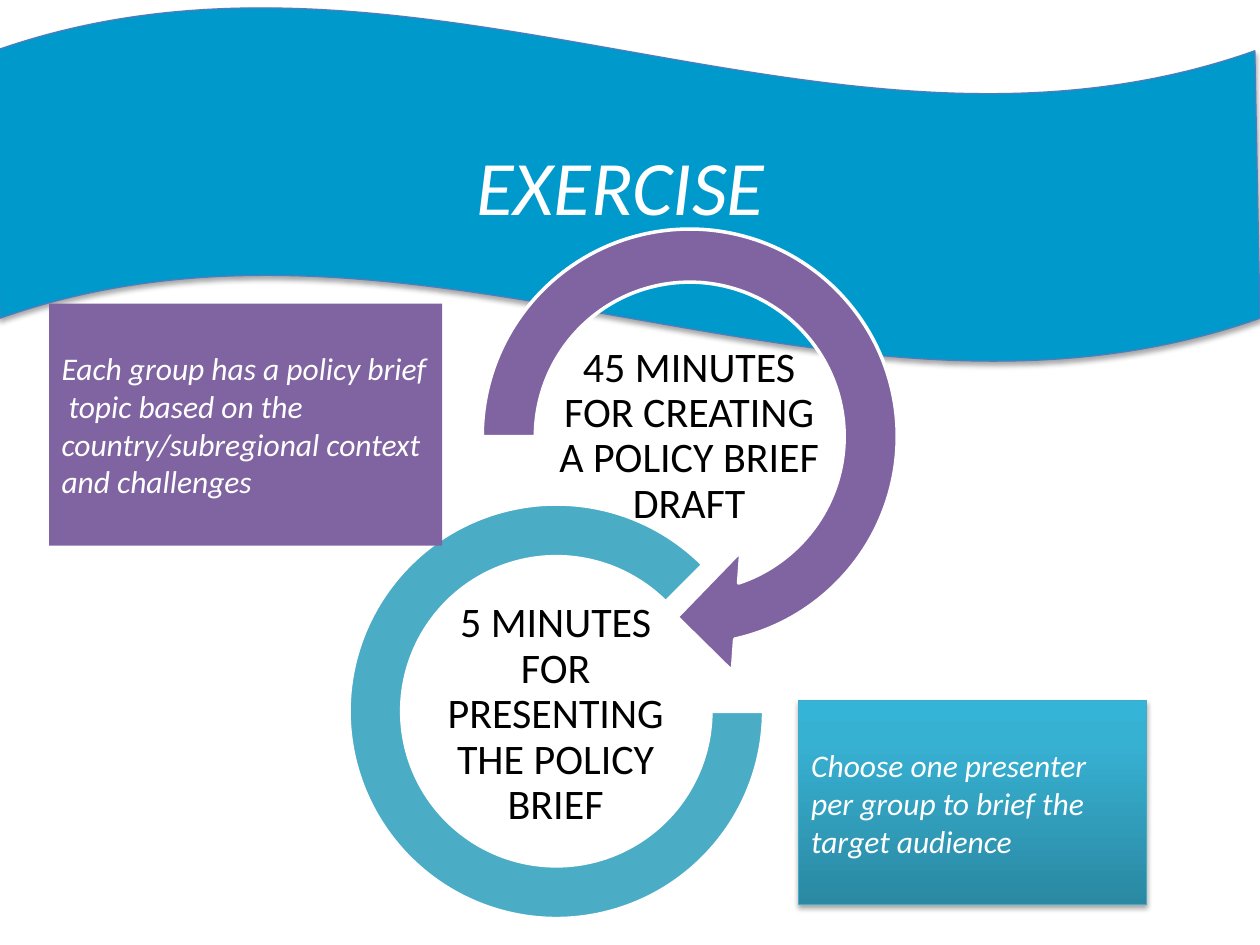
from copy import deepcopy
from dataclasses import dataclass

from lxml import etree
from pptx import Presentation
from pptx.dml.color import RGBColor
from pptx.enum.shapes import MSO_SHAPE
from pptx.enum.text import MSO_ANCHOR, PP_ALIGN
from pptx.oxml.ns import qn
from pptx.util import Inches, Pt

WAVE, RECT = MSO_SHAPE.WAVE, MSO_SHAPE.RECTANGLE
ARROW, ARC = MSO_SHAPE.CIRCULAR_ARROW, MSO_SHAPE.BLOCK_ARC
LEFT, CENTER = PP_ALIGN.LEFT, PP_ALIGN.CENTER
TOP, MIDDLE = MSO_ANCHOR.TOP, MSO_ANCHOR.MIDDLE


@dataclass(frozen=True)
class Theme:
    font: str = "Calibri"
    title: int = 44
    step: int = 24
    note: int = 18
    white: str = "FFFFFF"
    black: str = "000000"
    blue: str = "0099CC"
    edge: str = "4B7EBC"
    purple: str = "8064A2"
    teal: str = "4BACC6"
    rim: str = "46AAC5"
    fade: tuple = ((0, "2A88A2"), (0.8, "37B1D2"), (1, "34B4D6"))


THEME = Theme()


def color(code):
    return RGBColor.from_string(code)


def add_shape(slide, kind, box, fill=None, line=None, width=0.75, adjust=()):
    shape = slide.shapes.add_shape(kind, *map(Inches, box))
    shape.shadow.inherit = False
    for i, value in enumerate(adjust):
        shape.adjustments[i] = value
    if fill:
        shape.fill.solid()
        shape.fill.fore_color.rgb = color(fill)
    if line:
        shape.line.color.rgb = color(line)
        shape.line.width = Pt(width)
    else:
        shape.line.fill.background()
    return shape


def add_shadow(shape):
    """Give the shape a soft shadow that falls straight down."""
    effects = shape._element.spPr.find(qn("a:effectLst"))
    outer = etree.SubElement(
        effects, qn("a:outerShdw"), blurRad=str(Pt(3.1)), dist=str(Pt(1.8)),
        dir="5400000", rotWithShape="0")
    tint = etree.SubElement(outer, qn("a:srgbClr"), val=THEME.black)
    etree.SubElement(tint, qn("a:alpha"), val="35000")


def add_fade(shape, stops):
    """Fill the shape with a gradient that runs from bottom to top."""
    shape.fill.gradient()
    shape.fill.gradient_angle = 90
    nodes = shape._element.spPr.find(".//" + qn("a:gsLst"))
    while len(nodes) < len(stops):
        nodes.append(deepcopy(nodes[0]))
    for stop, (place, code) in zip(shape.fill.gradient_stops, stops):
        stop.position = place
        stop.color.rgb = color(code)


def write(shape, text, size, code, align=LEFT, anchor=MIDDLE, italic=True):
    frame = shape.text_frame
    frame.word_wrap = True
    frame.vertical_anchor = anchor
    para = frame.paragraphs[0]
    para.alignment = align
    run = para.add_run()
    run.text = text
    run.font.name = THEME.font
    run.font.size = Pt(size)
    run.font.italic = italic
    run.font.color.rgb = color(code)
    return frame


def add_banner(slide, box):
    wave = add_shape(slide, WAVE, box, THEME.blue, THEME.edge,
                     adjust=(0.125, 0.002))
    add_shadow(wave)
    left, top = box[:2]
    title = slide.shapes.add_textbox(
        Inches(left + 0.24), Inches(top + 1), Inches(9.45), Inches(0.84))
    write(title, "EXERCISE", THEME.title, THEME.white, CENTER, TOP)


def add_step(slide, kind, box, fill, adjust, text, spot):
    """Draw a ring and its label, whose top left corner is at spot."""
    add_shape(slide, kind, box, fill, THEME.white, 2, adjust)
    label = slide.shapes.add_textbox(
        *map(Inches, spot), Inches(2.14), Inches(1.07))
    frame = write(label, text, THEME.step, THEME.black, CENTER, italic=False)
    frame.paragraphs[0].line_spacing = 0.9
    frame.margin_left = frame.margin_right = Inches(0.02)
    frame.margin_top = frame.margin_bottom = Inches(0.02)


def add_cycle(slide):
    add_step(slide, ARROW, (3.56, 1.55, 3.83, 3.83), THEME.purple,
             (0.11, 11.42, 45, 108, 0.125),
             "45 MINUTES FOR CREATING A POLICY BRIEF DRAFT", (4.4, 2.93))
    add_step(slide, ARC, (2.77, 4, 3.29, 3.29), THEME.teal, (0, 189, 0.127),
             "5 MINUTES FOR PRESENTING THE POLICY BRIEF", (3.34, 5.14))


def add_topic(slide, box):
    note = add_shape(slide, RECT, box, THEME.purple)
    write(note, "Each group has a policy brief  topic based on the "
          "country/subregional context and challenges",
          THEME.note, THEME.white)


def add_brief(slide, box):
    note = add_shape(slide, RECT, box, line=THEME.rim)
    add_fade(note, THEME.fade)
    add_shadow(note)
    write(note, "Choose one presenter per group to brief the target audience",
          THEME.note, THEME.white)


def main():
    deck = Presentation()
    deck.slide_width, deck.slide_height = Inches(10), Inches(7.5)
    slide = deck.slides.add_slide(deck.slide_layouts[6])
    add_banner(slide, (-0.04, 0.05, 10.04, 2.83))
    add_cycle(slide)
    add_topic(slide, (0.39, 2.41, 3.12, 1.92))
    add_brief(slide, (6.34, 5.56, 2.76, 1.62))
    deck.save("out.pptx")


if __name__ == "__main__":
    main()
